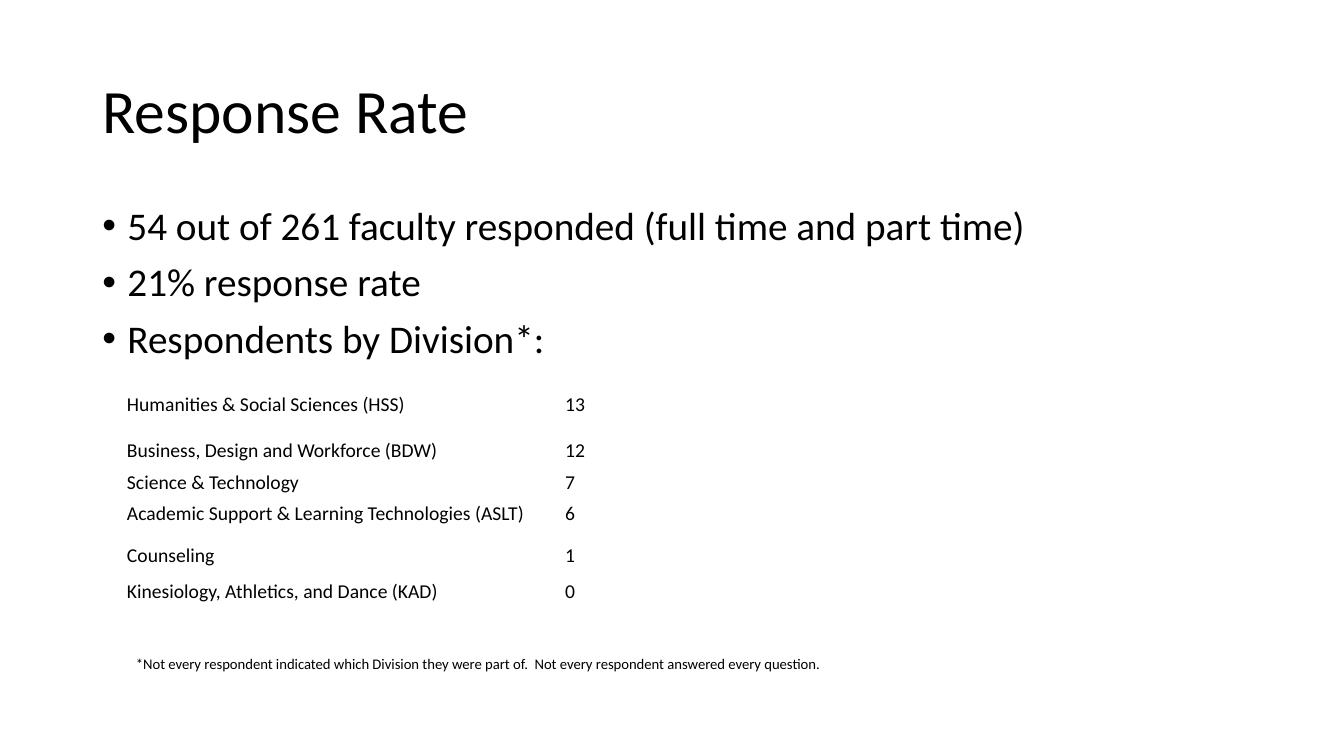
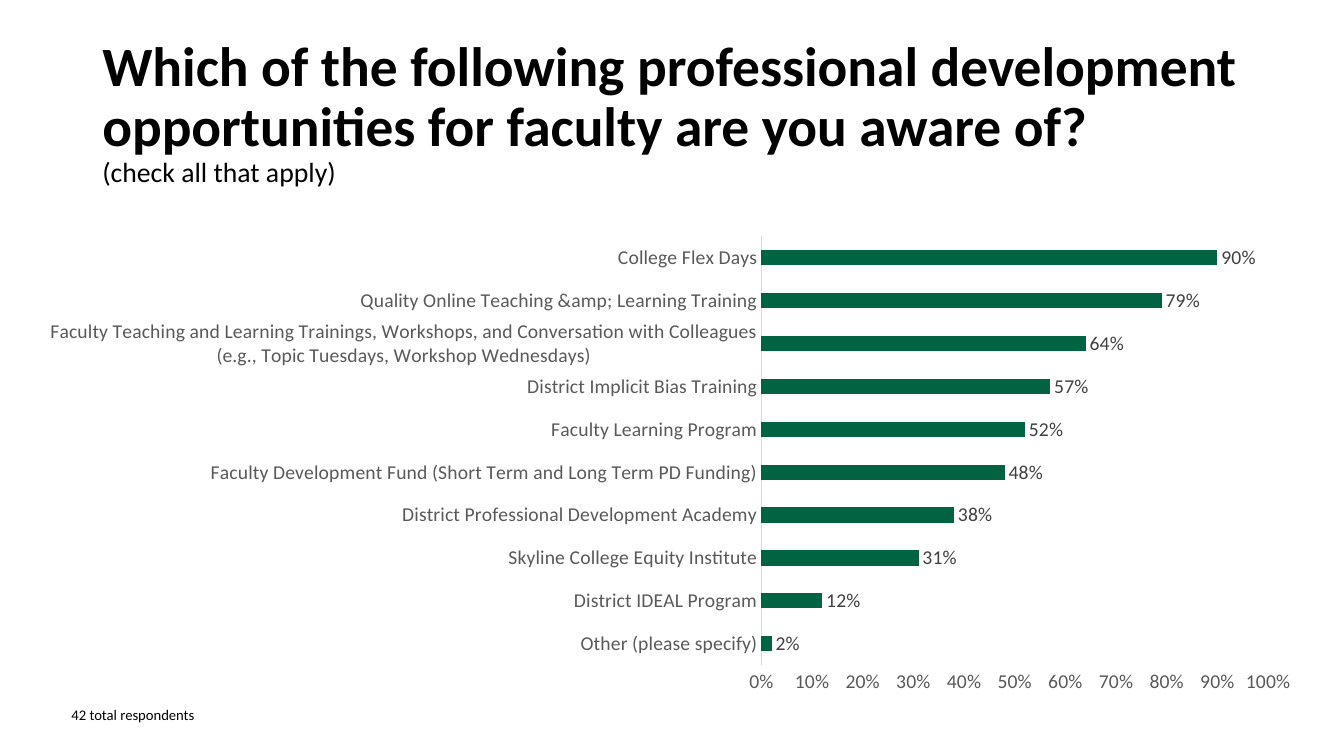
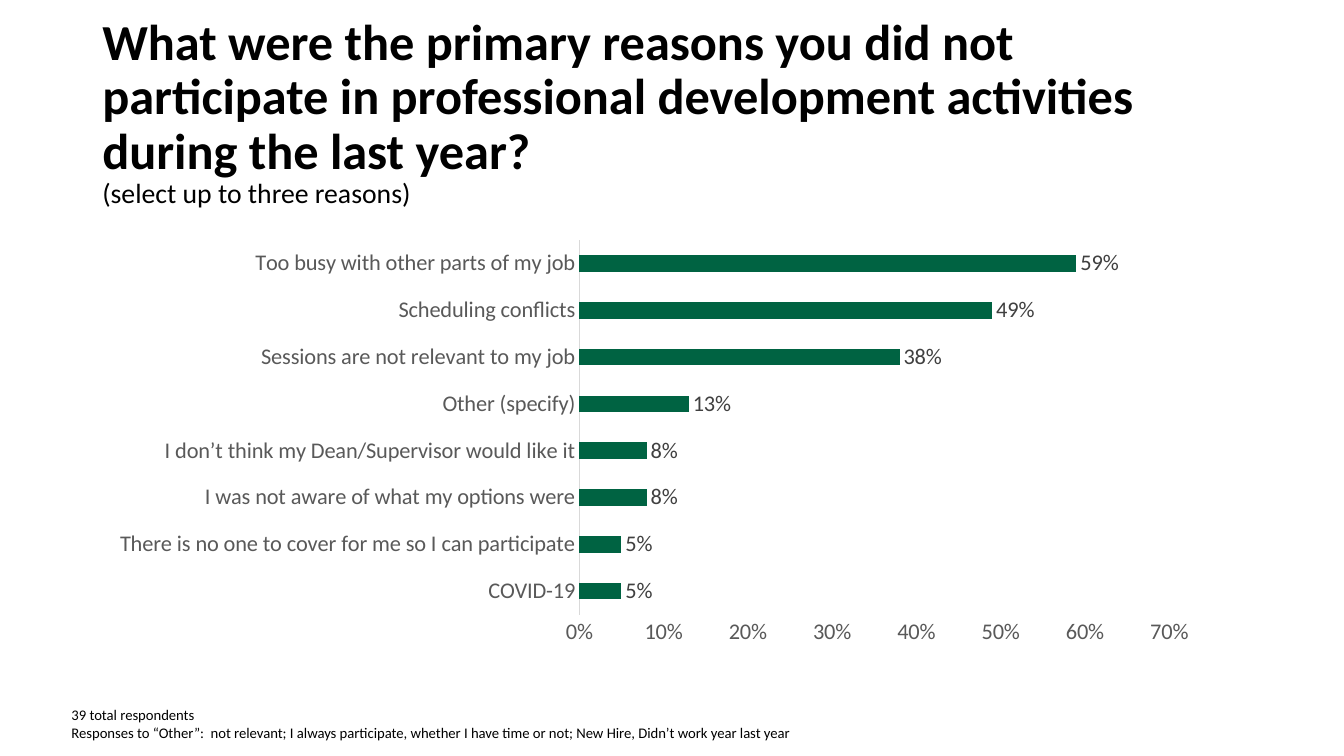
from lxml import etree
from pptx import Presentation
from pptx.chart.data import CategoryChartData
from pptx.dml.color import RGBColor
from pptx.enum.chart import XL_CHART_TYPE, XL_LABEL_POSITION, XL_TICK_MARK
from pptx.enum.text import MSO_ANCHOR
from pptx.oxml import parse_xml
from pptx.oxml.ns import nsdecls, qn
from pptx.util import Pt

FONT = "Calibri"
COLORS = {"text": "000000", "axis": "595959", "label": "404040",
          "line": "D9D9D9", "bar": "006342"}
BLANK_LAYOUT = 6
NOTE_SIZE = 10.5
HINT_SIZE = 19.8

DIVISIONS = [
    ("Humanities & Social Sciences (HSS)", "13", 38),
    ("Business, Design and Workforce (BDW)", "12", 27.5),
    ("Science & Technology", "7", 18),
    ("Academic Support & Learning Technologies (ASLT)", "6", 27),
    ("Counseling", "1", 33),
    ("Kinesiology, Athletics, and Dance (KAD)", "0", 18),
]

# Bars run from the bottom of the chart upwards
AWARENESS = [
    ("Other (please specify)", 0.02),
    ("District IDEAL Program", 0.12),
    ("Skyline College Equity Institute", 0.31),
    ("District Professional Development Academy", 0.38),
    ("Faculty Development Fund (Short Term and Long Term PD Funding)", 0.48),
    ("Faculty Learning Program", 0.52),
    ("District Implicit Bias Training", 0.57),
    ("Faculty Teaching and Learning Trainings, Workshops, and Conversation "
     "with Colleagues (e.g., Topic Tuesdays, Workshop Wednesdays)", 0.64),
    ("Quality Online Teaching &amp; Learning Training", 0.79),
    ("College Flex Days", 0.9),
]

REASONS = [
    ("COVID-19", 0.05),
    ("There is no one to cover for me so I can participate", 0.05),
    ("I was not aware of what my options were", 0.08),
    ("I don’t think my Dean/Supervisor would like it", 0.08),
    ("Other (specify)", 0.13),
    ("Sessions are not relevant to my job", 0.38),
    ("Scheduling conflicts", 0.49),
    ("Too busy with other parts of my job", 0.59),
]


def set_font(font, size, color="text", bold=False):
    font.name = FONT
    font.size = Pt(size)
    font.bold = bold
    font.color.rgb = RGBColor.from_string(COLORS[color])


def add_text(slide, box, lines, anchor=MSO_ANCHOR.TOP, line_spacing=None):
    """Add a text box; each line is (text, size, bold)."""
    shape = slide.shapes.add_textbox(*map(Pt, box))
    text_frame = shape.text_frame
    text_frame.word_wrap = True
    text_frame.vertical_anchor = anchor
    text_frame.text = "\n".join(text for text, _, _ in lines)
    for paragraph, (_, size, bold) in zip(text_frame.paragraphs, lines):
        paragraph.line_spacing = line_spacing
        set_font(paragraph.runs[0].font, size, bold=bold)
    return text_frame


def add_title(slide, text, size, hint=None):
    lines = [(text, size, hint is not None)]
    if hint:
        lines.append((hint, HINT_SIZE, False))
    add_text(slide, (66, 28.75, 828, 104.4), lines, MSO_ANCHOR.MIDDLE, 0.9)


def add_note(slide, left, top, *texts):
    add_text(slide, (left, top, 540, 20), [(text, NOTE_SIZE, False) for text in texts])


def add_bullets(slide, box, texts):
    text_frame = add_text(slide, box, [(text, 28, False) for text in texts],
                          line_spacing=0.9)
    for index, paragraph in enumerate(text_frame.paragraphs):
        paragraph.space_before = Pt(10 if index else 0)
        properties = paragraph._p.get_or_add_pPr()
        properties.set("marL", str(Pt(18)))
        properties.set("indent", str(Pt(-18)))
        etree.SubElement(properties, qn("a:buFont")).set("typeface", "Arial")
        etree.SubElement(properties, qn("a:buChar")).set("char", "•")


def add_division_table(slide, left, top, widths):
    height = sum(row[-1] for row in DIVISIONS)
    table = slide.shapes.add_table(len(DIVISIONS), len(widths), Pt(left), Pt(top),
                                   Pt(sum(widths)), Pt(height)).table
    table.first_row = table.horz_banding = False
    for column, width in zip(table.columns, widths):
        column.width = Pt(width)
    for row, (division, count, row_height) in zip(table.rows, DIVISIONS):
        row.height = Pt(row_height)
        for cell, text in zip(row.cells, (division, count)):
            cell.fill.background()
            cell.vertical_anchor = MSO_ANCHOR.MIDDLE
            cell.margin_left = cell.margin_right = cell.margin_top = Pt(0.7)
            cell.margin_bottom = 0
            cell.text = text
            set_font(cell.text_frame.paragraphs[0].runs[0].font, 14)


def place_plot(chart, x, y, width, height):
    """Fix the inner plot area, in fractions of the chart."""
    sizes = "".join(f'<c:{tag} val="{value}"/>' for tag, value in
                    zip("xywh", (x, y, width, height)))
    layout = parse_xml(
        f'<c:layout {nsdecls("c")}><c:manualLayout><c:layoutTarget val="inner"/>'
        f'<c:xMode val="edge"/><c:yMode val="edge"/>{sizes}'
        '</c:manualLayout></c:layout>')
    plot_area = chart._chartSpace.chart.plotArea
    for old_layout in plot_area.findall(qn("c:layout")):
        plot_area.remove(old_layout)
    plot_area.insert(0, layout)


def add_bar_chart(slide, box, answers, size, maximum, plot_box):
    data = CategoryChartData(number_format="0%")
    data.categories = [answer for answer, _ in answers]
    data.add_series("Series 1", [share for _, share in answers])
    chart = slide.shapes.add_chart(XL_CHART_TYPE.BAR_CLUSTERED,
                                   *map(Pt, box), data).chart
    chart.has_legend = chart.has_title = False
    set_font(chart.font, size)
    place_plot(chart, *plot_box)

    # Axes
    for axis in (chart.category_axis, chart.value_axis):
        axis.major_tick_mark = axis.minor_tick_mark = XL_TICK_MARK.NONE
        axis.has_major_gridlines = False
        set_font(axis.tick_labels.font, size, "axis")
    category_line = chart.category_axis.format.line
    category_line.color.rgb = RGBColor.from_string(COLORS["line"])
    category_line.width = Pt(0.75)
    value_axis = chart.value_axis
    value_axis.format.line.fill.background()
    value_axis.minimum_scale = 0
    value_axis.maximum_scale = maximum
    value_axis.major_unit = 0.1
    value_axis.tick_labels.number_format = "0%"
    value_axis.tick_labels.number_format_is_linked = False

    # Bars and their labels
    plot = chart.plots[0]
    plot.gap_width = 182
    plot.vary_by_categories = False
    fill = plot.series[0].format.fill
    fill.solid()
    fill.fore_color.rgb = RGBColor.from_string(COLORS["bar"])
    plot.has_data_labels = True
    labels = plot.data_labels
    labels.show_value = True
    labels.position = XL_LABEL_POSITION.OUTSIDE_END
    labels.number_format = "0%"
    labels.number_format_is_linked = False
    set_font(labels.font, size, "label")


def add_slide(presentation):
    return presentation.slides.add_slide(presentation.slide_layouts[BLANK_LAYOUT])


def main():
    presentation = Presentation()
    presentation.slide_width = Pt(960)
    presentation.slide_height = Pt(540)

    # Response rate
    slide = add_slide(presentation)
    add_title(slide, "Response Rate", 44)
    add_bullets(slide, (66, 144, 828, 120), [
        "54 out of 261 faculty responded (full time and part time)",
        "21% response rate",
        "Respondents by Division*:",
    ])
    add_division_table(slide, 90, 270, (313, 118))
    add_note(slide, 90, 464.4, "*Not every respondent indicated which Division they "
             "were part of.  Not every respondent answered every question.")

    # Awareness of opportunities
    slide = add_slide(presentation)
    add_title(slide, "Which of the following professional development opportunities "
              "for faculty are you aware of?", 39.6, "(check all that apply)")
    add_bar_chart(slide, (15, 162, 928, 340.5), AWARENESS, 14, 1,
                  (0.57, 0.02, 0.39, 0.9))
    add_note(slide, 44, 501, "42 total respondents")

    # Reasons for not participating
    slide = add_slide(presentation)
    add_title(slide, "What were the primary reasons you did not participate in "
              "professional development activities during the last year?", 36,
              "(select up to three reasons)")
    add_note(slide, 44, 501, "39 total respondents",
             "Responses to “Other”:  not relevant; I always participate, whether I "
             "have time or not; New Hire, Didn’t work year last year")
    add_bar_chart(slide, (72, 165.5, 795, 304), REASONS, 16, 0.7,
                  (0.43, 0.02, 0.53, 0.88))

    presentation.save("out.pptx")


if __name__ == "__main__":
    main()
